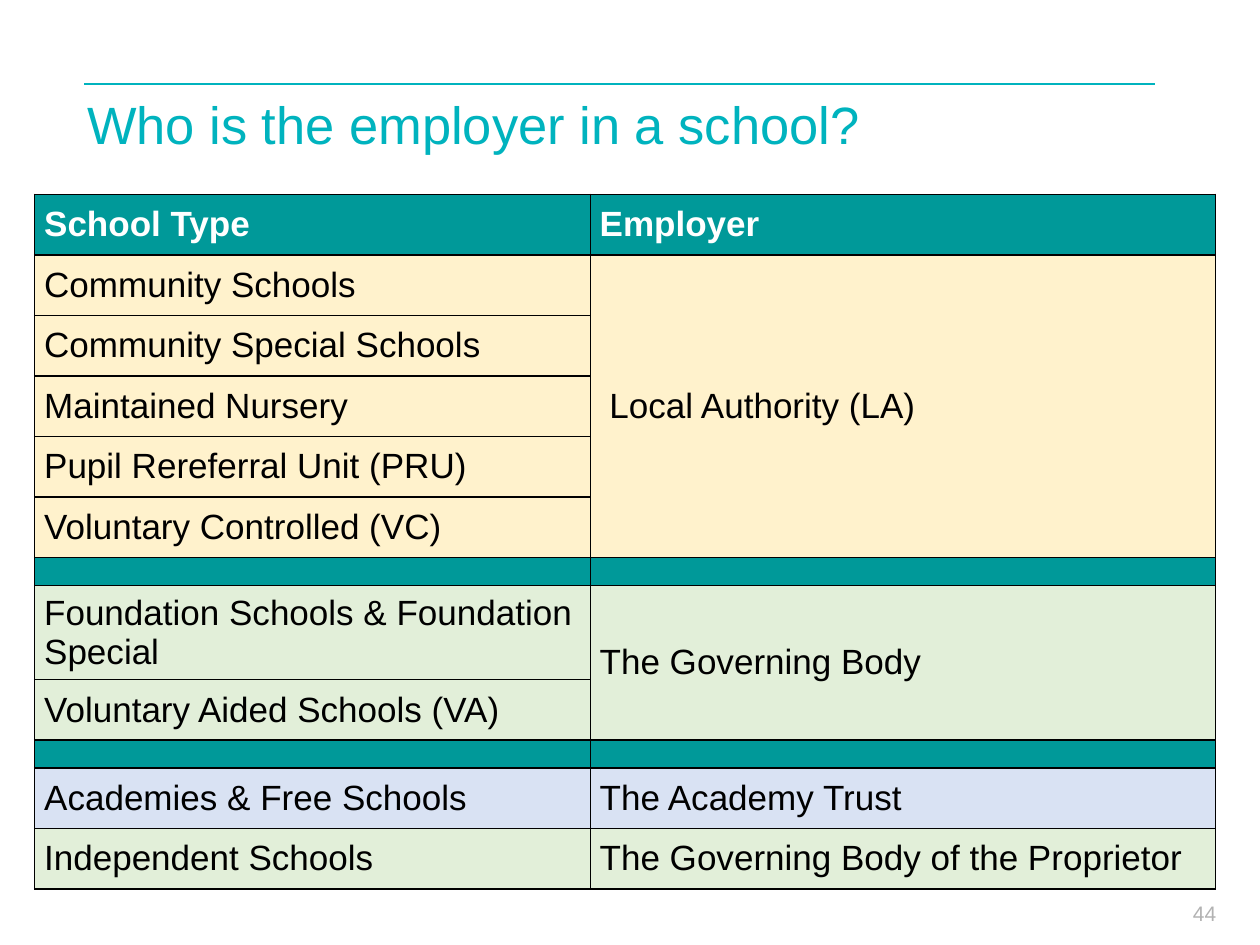
from dataclasses import dataclass

import pptx
import pptx.dml.color
import pptx.enum.shapes
import pptx.enum.text
import pptx.oxml
import pptx.oxml.ns
import pptx.util
from pptx.util import Cm

COLORS = {
    "accent": "00B3BE",
    "teal": "009999",
    "cream": "FFF2CC",
    "green": "E2EFD9",
    "blue": "D9E2F3",
    "white": "FFFFFF",
    "black": "000000",
    "gray": "B2B2B2",
}
FONT = "Arial"
ROW_HEIGHT, TALL_HEIGHT, DIVIDER_HEIGHT = 1.22, 1.9, 0.56
COLUMN_WIDTHS = (11.2, 12.6)


@dataclass
class Group:
    """School types that share one employer."""
    schools: tuple[str, ...]
    employer: str
    fill: str
    text: str = "black"
    bold: bool = False


DIVIDER = Group(("",), "", "teal")
GROUPS = [
    Group(("School Type",), "Employer", "teal", "white", True),
    Group(("Community Schools", "Community Special Schools", "Maintained Nursery",
           "Pupil Rereferral Unit (PRU)", "Voluntary Controlled (VC)"),
          " Local Authority (LA)", "cream"),
    DIVIDER,
    Group(("Foundation Schools & Foundation Special", "Voluntary Aided Schools (VA)"),
          "The Governing Body", "green"),
    DIVIDER,
    Group(("Academies & Free Schools",), "The Academy Trust", "blue"),
    Group(("Independent Schools",), "The Governing Body of the Proprietor", "green"),
]


def rgb(name: str) -> pptx.dml.color.RGBColor:
    return pptx.dml.color.RGBColor.from_string(COLORS[name])


def set_font(paragraph, size: float, color: str, bold: bool = False) -> None:
    font = paragraph.font
    font.name, font.size, font.bold = FONT, pptx.util.Pt(size), bold
    font.color.rgb = rgb(color)


def row_height(school: str) -> float:
    if not school:
        return DIVIDER_HEIGHT
    return TALL_HEIGHT if len(school) > 30 else ROW_HEIGHT


def add_borders(cell) -> None:
    properties = cell._tc.get_or_add_tcPr()
    for side in ("lnL", "lnR", "lnT", "lnB"):
        properties.append(pptx.oxml.parse_xml(
            f'<a:{side} {pptx.oxml.ns.nsdecls("a")} w="{pptx.util.Pt(1)}"><a:solidFill>'
            f'<a:srgbClr val="{COLORS["black"]}"/></a:solidFill></a:{side}>'))


def format_cell(cell, text: str, group: Group) -> None:
    cell.text = text
    cell.vertical_anchor = pptx.enum.text.MSO_ANCHOR.MIDDLE
    cell.margin_left = cell.margin_right = Cm(0.19)
    cell.margin_top = cell.margin_bottom = 0
    set_font(cell.text_frame.paragraphs[0], 20 if text else 8, group.text, group.bold)
    add_borders(cell)
    cell.fill.solid()
    cell.fill.fore_color.rgb = rgb(group.fill)


def add_employer_table(slide) -> None:
    heights = [row_height(school) for group in GROUPS for school in group.schools]
    table = slide.shapes.add_table(
        len(heights), len(COLUMN_WIDTHS), Cm(0.7), Cm(3.92),
        Cm(sum(COLUMN_WIDTHS)), Cm(sum(heights))).table
    for column, width in zip(table.columns, COLUMN_WIDTHS):
        column.width = Cm(width)
    for row, height in zip(table.rows, heights):
        row.height = Cm(height)

    first = 0
    for group in GROUPS:
        last = first + len(group.schools) - 1
        for index, school in enumerate(group.schools):
            format_cell(table.cell(first + index, 0), school, group)
            format_cell(table.cell(first + index, 1), "" if index else group.employer, group)
        if last > first:
            table.cell(first, 1).merge(table.cell(last, 1))
        first = last + 1


def add_rule(slide) -> None:
    rule = slide.shapes.add_connector(
        pptx.enum.shapes.MSO_CONNECTOR.STRAIGHT, Cm(1.7), Cm(1.69), Cm(23.29), Cm(1.69))
    rule.line.color.rgb = rgb("accent")
    rule.line.width = pptx.util.Pt(1.5)
    rule._element.spPr.append(
        pptx.oxml.parse_xml(f'<a:effectLst {pptx.oxml.ns.nsdecls("a")}/>'))


def add_page_number(slide) -> None:
    frame = slide.shapes.add_textbox(Cm(19.9), Cm(18.02), Cm(4.87), Cm(0.76)).text_frame
    frame.word_wrap = True
    frame.text = "44"
    paragraph = frame.paragraphs[0]
    paragraph.alignment = pptx.enum.text.PP_ALIGN.RIGHT
    set_font(paragraph, 12, "gray")


def format_title(title) -> None:
    # The box ends above the table
    title.left, title.top, title.width, title.height = Cm(1.5), Cm(1.73), Cm(21.6), Cm(2)
    frame = title.text_frame
    frame.text = "Who is the employer in a school?"
    frame.auto_size = pptx.enum.text.MSO_AUTO_SIZE.NONE
    frame.vertical_anchor = pptx.enum.text.MSO_ANCHOR.TOP
    paragraph = frame.paragraphs[0]
    paragraph.alignment = pptx.enum.text.PP_ALIGN.LEFT
    set_font(paragraph, 30, "accent")


def main() -> None:
    presentation = pptx.Presentation()
    presentation.slide_width, presentation.slide_height = Cm(25.4), Cm(19.05)
    slide = presentation.slides.add_slide(presentation.slide_layouts[5])

    # Heading
    format_title(slide.shapes.title)
    add_rule(slide)

    # Table, with the page number clear below it
    add_employer_table(slide)
    add_page_number(slide)
    presentation.save("out.pptx")


if __name__ == "__main__":
    main()
